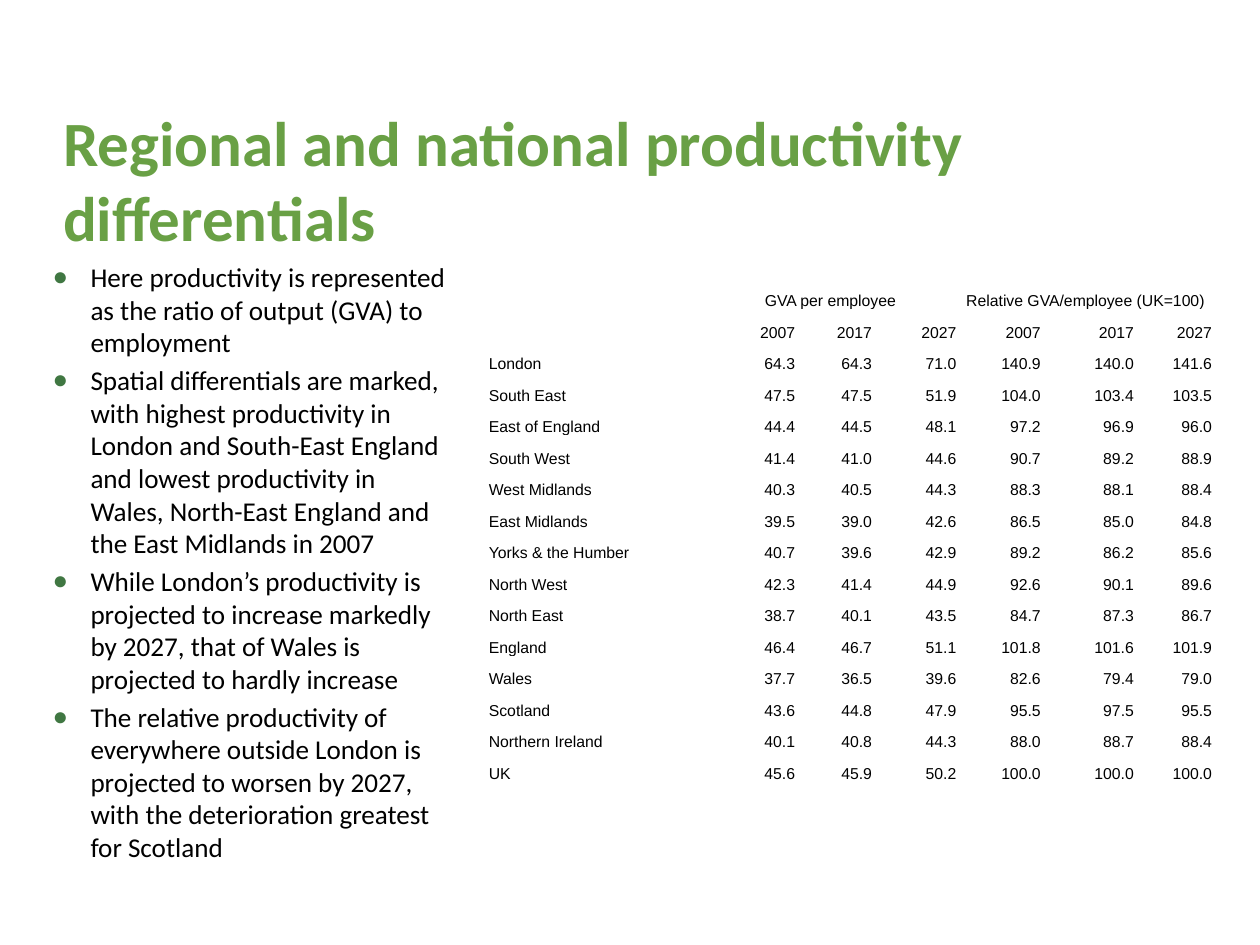
from lxml.etree import SubElement
from pptx import Presentation
from pptx.dml.color import RGBColor
from pptx.enum.text import MSO_ANCHOR, MSO_AUTO_SIZE, PP_ALIGN
from pptx.oxml.ns import qn
from pptx.util import Inches, Pt

TITLE = "Regional and national productivity differentials"
POINTS = [
    "Here productivity is represented as the ratio of output (GVA) to employment",
    "Spatial differentials are marked, with highest productivity in London and "
    "South-East England and lowest productivity in Wales, North-East England "
    "and the East Midlands in 2007",
    "While London’s productivity is projected to increase markedly by 2027, "
    "that of Wales is projected to hardly increase",
    "The relative productivity of everywhere outside London is projected to "
    "worsen by 2027, with the deterioration greatest for Scotland",
]
MEASURES = ["GVA per employee", "Relative GVA/employee (UK=100)"]
YEARS = ["2007", "2017", "2027"]
REGIONS = [
    ("London", 64.3, 64.3, 71.0, 140.9, 140.0, 141.6),
    ("South East", 47.5, 47.5, 51.9, 104.0, 103.4, 103.5),
    ("East of England", 44.4, 44.5, 48.1, 97.2, 96.9, 96.0),
    ("South West", 41.4, 41.0, 44.6, 90.7, 89.2, 88.9),
    ("West Midlands", 40.3, 40.5, 44.3, 88.3, 88.1, 88.4),
    ("East Midlands", 39.5, 39.0, 42.6, 86.5, 85.0, 84.8),
    ("Yorks & the Humber", 40.7, 39.6, 42.9, 89.2, 86.2, 85.6),
    ("North West", 42.3, 41.4, 44.9, 92.6, 90.1, 89.6),
    ("North East", 38.7, 40.1, 43.5, 84.7, 87.3, 86.7),
    ("England", 46.4, 46.7, 51.1, 101.8, 101.6, 101.9),
    ("Wales", 37.7, 36.5, 39.6, 82.6, 79.4, 79.0),
    ("Scotland", 43.6, 44.8, 47.9, 95.5, 97.5, 95.5),
    ("Northern Ireland", 40.1, 40.8, 44.3, 88.0, 88.7, 88.4),
    ("UK", 45.6, 45.9, 50.2, 100.0, 100.0, 100.0),
]
COLUMN_WIDTHS = [1.71, 0.74, 0.61, 0.67, 0.67, 0.74, 0.62]
ROW_HEIGHT = 0.25

THEME = {
    "title": ("Calibri", 36, "69A045", True),
    "body": ("Calibri", 15.5, "000000", False),
    "table": ("Arial", 9, "000000", False),
    "bullet": "407742",
}


def add_run(paragraph, text, role):
    run = paragraph.add_run()
    run.text = text
    font_name, size, color, bold = THEME[role]
    run.font.name, run.font.size, run.font.bold = font_name, Pt(size), bold
    run.font.color.rgb = RGBColor.from_string(color)


def add_bullet(paragraph):
    props = paragraph._p.get_or_add_pPr()
    props.set("marL", str(Inches(0.3)))
    props.set("indent", str(Inches(-0.3)))
    color = SubElement(props, qn("a:buClr"))
    SubElement(color, qn("a:srgbClr"), val=THEME["bullet"])
    SubElement(props, qn("a:buSzPct"), val="95000")
    SubElement(props, qn("a:buFont"), typeface="Arial")
    SubElement(props, qn("a:buChar"), char="●")


def add_title(slide):
    title = slide.shapes.title
    title.left, title.top = Inches(0.5), Inches(0.77)
    title.width, title.height = Inches(9), Inches(1.25)
    frame = title.text_frame
    frame.auto_size = MSO_AUTO_SIZE.NONE
    frame.vertical_anchor = MSO_ANCHOR.BOTTOM
    frame.margin_left = frame.margin_right = frame.margin_bottom = 0
    frame.margin_top = Inches(0.05)
    paragraph = frame.paragraphs[0]
    paragraph.alignment = PP_ALIGN.LEFT
    add_run(paragraph, TITLE, "title")


def add_points(slide):
    box = slide.shapes.add_textbox(Inches(0.32), Inches(2.02), Inches(3.35), Inches(4.93))
    frame = box.text_frame
    frame.word_wrap = True
    for index, point in enumerate(POINTS):
        paragraph = frame.add_paragraph() if index else frame.paragraphs[0]
        add_bullet(paragraph)
        if index:
            paragraph.space_before = Pt(3.1)
        add_run(paragraph, point, "body")


def fill_cell(cell, text, alignment):
    cell.fill.background()
    cell.vertical_anchor = MSO_ANCHOR.BOTTOM
    cell.margin_left = cell.margin_right = cell.margin_top = Inches(0.01)
    cell.margin_bottom = 0
    paragraph = cell.text_frame.paragraphs[0]
    paragraph.alignment = alignment
    if text:
        add_run(paragraph, text, "table")
    else:  # keeps an empty cell from stretching its row
        SubElement(paragraph._p, qn("a:endParaRPr"), sz=str(THEME["table"][1] * 100))


def add_productivity_table(slide):
    measure_row = [""]
    for measure in MEASURES:
        measure_row += [measure] + [""] * (len(YEARS) - 1)
    rows = [measure_row, [""] + YEARS * len(MEASURES)]
    rows += [[region] + [f"{value:.1f}" for value in values] for region, *values in REGIONS]

    table = slide.shapes.add_table(
        len(rows), len(COLUMN_WIDTHS), Inches(3.87), Inches(2.21),
        Inches(sum(COLUMN_WIDTHS)), Inches(ROW_HEIGHT * len(rows))).table
    table.first_row = table.horz_banding = False
    for column, width in zip(table.columns, COLUMN_WIDTHS):
        column.width = Inches(width)
    for r, row in enumerate(rows):
        table.rows[r].height = Inches(ROW_HEIGHT)
        for c, text in enumerate(row):
            if c == 0:
                alignment = PP_ALIGN.LEFT
            else:
                alignment = PP_ALIGN.RIGHT if r else PP_ALIGN.CENTER
            fill_cell(table.cell(r, c), text, alignment)
    for first in range(1, len(COLUMN_WIDTHS), len(YEARS)):
        table.cell(0, first).merge(table.cell(0, first + len(YEARS) - 1))


def main():
    deck = Presentation()
    deck.slide_width, deck.slide_height = Inches(10), Inches(7.5)
    slide = deck.slides.add_slide(deck.slide_layouts[5])
    add_title(slide)
    add_points(slide)
    add_productivity_table(slide)
    deck.save("out.pptx")


if __name__ == "__main__":
    main()
